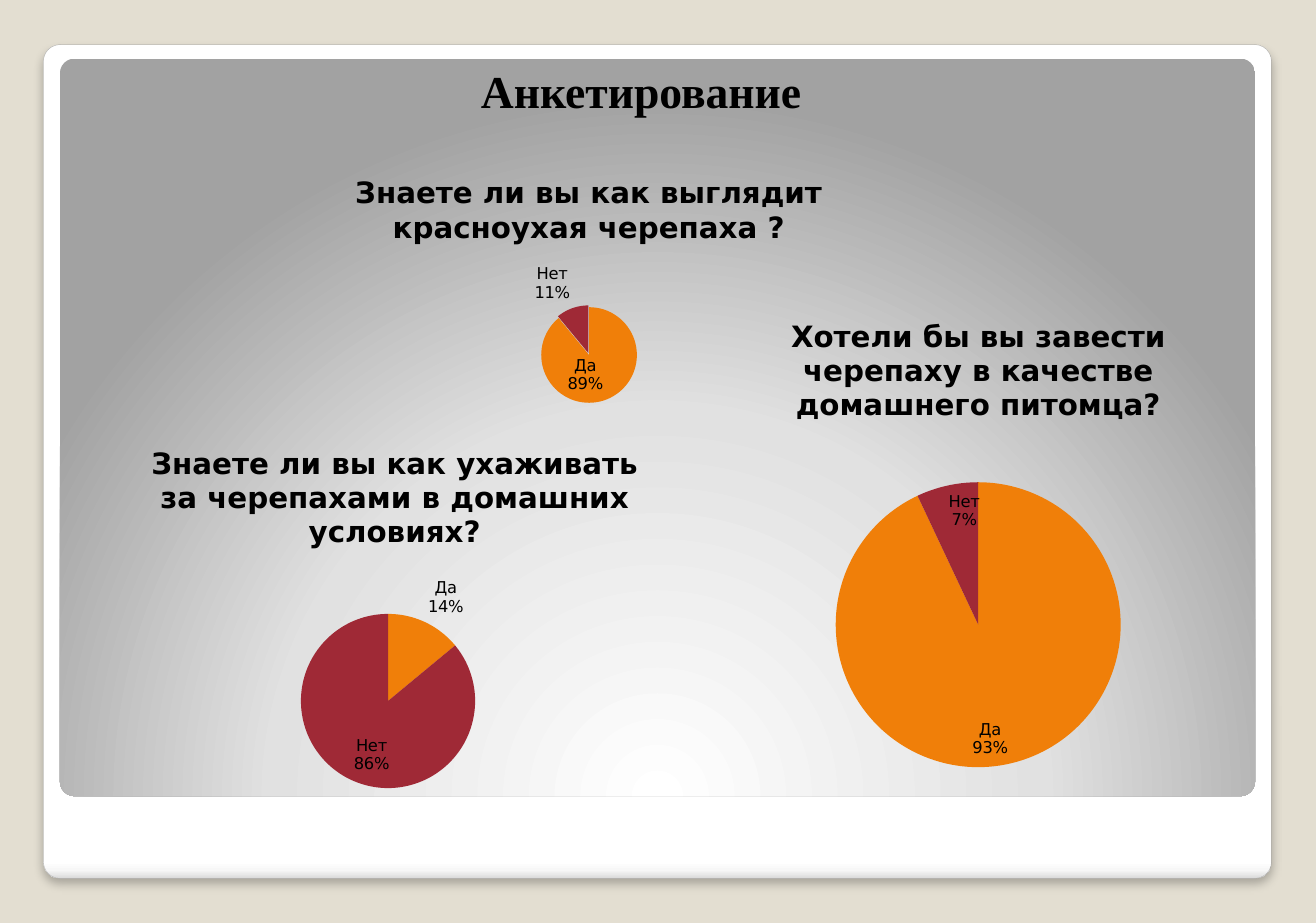
from lxml.etree import SubElement as Sub
from pptx import Presentation
from pptx.chart.data import CategoryChartData as Data
from pptx.dml.color import RGBColor as Rgb
from pptx.enum.chart import XL_CHART_TYPE as Kind, XL_LABEL_POSITION as Spot
from pptx.enum.shapes import MSO_SHAPE as Form
from pptx.enum.text import MSO_ANCHOR as Anchor, PP_ALIGN as Align
from pptx.oxml import parse_xml
from pptx.oxml.ns import nsdecls, qn
from pptx.util import Inches, Pt

WIDE, HIGH = Inches(11.22), Inches(7.87)
SANS, SERIF = "DejaVu Sans", "Times New Roman"
HUE = {
    "page": "E3DED1", "text": "000000", "edge": "A4A4A4",
    "yes": "F07F09", "no": "9F2936",
    "white": "FFFFFF", "pale": "F7F7F7", "mist": "E1E1E1",
    "rim": "DADADA", "grey": "A2A2A2",
}
ANSWERS = ("Да", "Нет")


def hue(name):
    return Rgb.from_string(HUE[name])


def area(left, top, wide, high):
    """Turn percent shares of the slide into lengths."""
    return [round(share * side / 100) for share, side in
            zip((left, top, wide, high), (WIDE, HIGH, WIDE, HIGH))]


def write(frame, text, font=SANS, size=18, bold=True, color="text"):
    para = frame.paragraphs[0]
    para.alignment = Align.CENTER
    run = para.add_run()
    run.text = text
    run.font.name, run.font.size, run.font.bold = font, Pt(size), bold
    run.font.color.rgb = hue(color)


def blend(shape, stops, way):
    """Fill a shape with a gradient: stops are (percent, colour) pairs."""
    marks = "".join(
        f'<a:gs pos="{pos * 1000}"><a:srgbClr val="{HUE[name]}"/></a:gs>'
        for pos, name in stops)
    fill = parse_xml(f'<a:gradFill {nsdecls("a")} rotWithShape="1">'
                     f'<a:gsLst>{marks}</a:gsLst>{way}</a:gradFill>')
    shape.element.spPr.find(qn("a:prstGeom")).addnext(fill)


def panel(slide, box, stops, way):
    shape = slide.shapes.add_shape(Form.ROUNDED_RECTANGLE, *area(*box))
    shape.adjustments[0] = 0.02
    shape.shadow.inherit = False
    shape.line.fill.background()
    blend(shape, stops, way)
    return shape


def shade(shape):
    """Drop a soft shadow straight below a shape."""
    glow = Sub(shape.element.spPr.find(qn("a:effectLst")), qn("a:outerShdw"),
               blurRad=str(Pt(6)), dist=str(Pt(4)), dir="5400000",
               algn="t", rotWithShape="0")
    tone = Sub(glow, qn("a:srgbClr"), val=HUE["text"])
    Sub(tone, qn("a:alpha"), val="25000")


def heading(slide, box, text):
    frame = slide.shapes.add_textbox(*area(*box)).text_frame
    frame.word_wrap = True
    frame.vertical_anchor = Anchor.TOP
    frame.margin_top = Inches(0.15)
    write(frame, text, font=SERIF, size=28)


def place(chart, mid, row, tall, ratio):
    """Fix the pie by its centre and height, in shares of the chart."""
    broad = tall / ratio
    parts = {"x": mid - broad / 2, "y": row - tall / 2, "w": broad, "h": tall}
    items = "".join(f'<c:{key} val="{val:.3f}"/>' for key, val in parts.items())
    plan = parse_xml(
        f'<c:layout {nsdecls("c")}><c:manualLayout>'
        '<c:layoutTarget val="inner"/><c:xMode val="edge"/>'
        f'<c:yMode val="edge"/>{items}</c:manualLayout></c:layout>')
    plot = chart.element.find(".//" + qn("c:plotArea"))
    for old in plot.findall(qn("c:layout")):
        plot.remove(old)
    plot.insert(0, plan)


def label(chart, outer):
    """Show answer and percent; the outer slice has its label outside."""
    series = chart.plots[0].series[0]
    tags = series.data_labels
    tags.number_format, tags.number_format_is_linked = "0%", False
    tags.position = Spot.INSIDE_END
    if outer is not None:
        series.points[outer].data_label.position = Spot.OUTSIDE_END
    for key, val in (("Val", 0), ("CatName", 1), ("Percent", 1)):
        for node in chart.element.iter(qn("c:show" + key)):
            node.set("val", str(val))
    for node in list(chart.element.iter(qn("c:showBubbleSize"))):
        gap = parse_xml(f'<c:separator {nsdecls("c")}>\n</c:separator>')
        node.addnext(gap)


def pie(slide, box, text, counts, spot, outer=None, burst=0):
    data = Data()
    data.categories = ANSWERS
    data.add_series("Series 1", counts)
    left, top, wide, high = area(*box)
    chart = slide.shapes.add_chart(Kind.PIE, left, top, wide, high, data).chart
    chart.font.name, chart.font.size = SANS, Pt(10)
    chart.font.color.rgb = hue("text")
    chart.has_legend = False
    chart.has_title = True
    write(chart.chart_title.text_frame, text)
    chart.chart_title.include_in_layout = False
    chart.plots[0].vary_by_categories = True
    series = chart.plots[0].series[0]
    for spin, name in enumerate(("yes", "no")):
        fill = series.points[spin].format.fill
        fill.solid()
        fill.fore_color.rgb = hue(name)
    if burst:
        node = parse_xml(f'<c:explosion {nsdecls("c")} val="{burst}"/>')
        chart.element.find(".//" + qn("c:dPt")).addprevious(node)
    label(chart, outer)
    place(chart, *spot, wide / high)


def main():
    deck = Presentation()
    deck.slide_width, deck.slide_height = WIDE, HIGH
    slide = deck.slides.add_slide(deck.slide_layouts[6])
    slide.background.fill.solid()
    slide.background.fill.fore_color.rgb = hue("page")

    card = panel(slide, (3.3, 4.83, 93.32, 90.34),
                 ((0, "white"), (98, "white"), (99, "pale"), (100, "rim")),
                 '<a:lin ang="5400000" scaled="0"/>')
    card.line.color.rgb = hue("edge")
    card.line.width = Pt(0.16)
    shade(card)
    panel(slide, (4.55, 6.35, 90.82, 79.92),
          ((0, "white"), (55, "mist"), (100, "grey")),
          '<a:path path="circle"><a:fillToRect l="50000" t="175000" '
          'r="50000" b="-75000"/></a:path>')
    heading(slide, (4.37, 4.96, 88.68, 13.98), "Анкетирование")

    pie(slide, (21.21, 16.9, 47.06, 33.04),
        "Знаете ли вы как выглядит красноухая черепаха ?",
        (89, 11), (0.5, 0.65, 0.32), outer=1, burst=2)
    pie(slide, (5.08, 46, 49.82, 41.04),
        "Знаете ли вы как ухаживать за черепахами в домашних условиях?",
        (14, 86), (0.49, 0.73, 0.46), outer=0)
    pie(slide, (54.19, 32.02, 40.29, 53.24),
        "Хотели бы вы завести черепаху в качестве домашнего питомца?",
        (93, 7), (0.5, 0.67, 0.58))
    deck.save("out.pptx")


if __name__ == "__main__":
    main()
